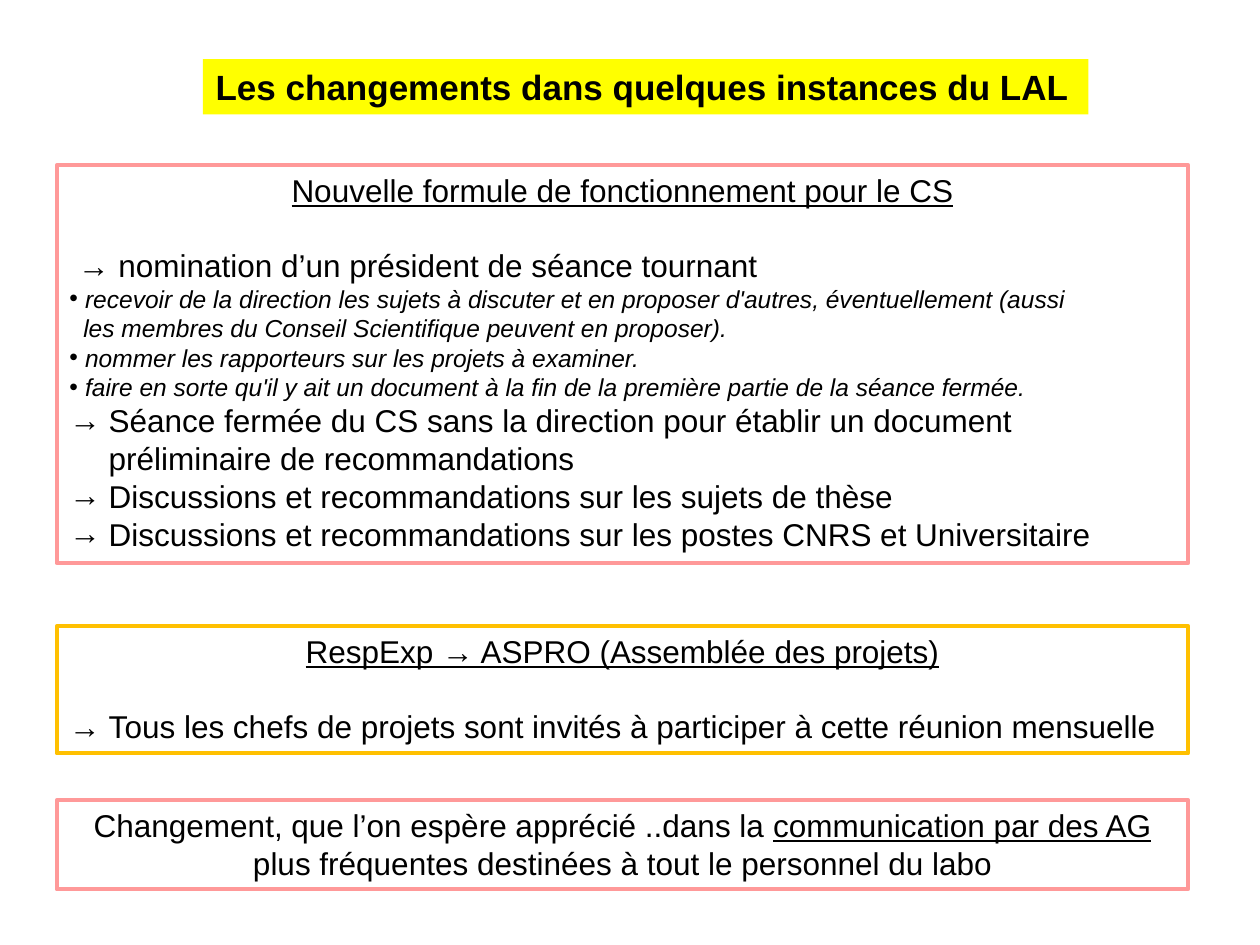
from lxml import etree
from pptx import Presentation
from pptx.dml.color import RGBColor
from pptx.enum.shapes import MSO_SHAPE
from pptx.enum.text import MSO_ANCHOR, MSO_AUTO_SIZE, PP_ALIGN
from pptx.oxml.ns import qn
from pptx.util import Pt

LEFT, WIDTH = 32.4, 646.6
PINK, AMBER, YELLOW, BLACK = "FF9999", "FFC000", "FFFF00", "000000"
BLANK_LINE = 21


def colour(value):
    return RGBColor.from_string(value)


def place(box, left, top, width, height):
    box.left, box.top, box.width, box.height = map(Pt, (left, top, width, height))


def prepare_text(box, anchor=MSO_ANCHOR.TOP):
    frame = box.text_frame
    frame.word_wrap = True
    frame.auto_size = MSO_AUTO_SIZE.NONE
    frame.vertical_anchor = anchor
    frame.margin_left = frame.margin_right = Pt(7.2)
    frame.margin_top = frame.margin_bottom = Pt(3.6)


def outline(box, line_colour, top, height):
    place(box, LEFT, top, WIDTH, height)
    box.fill.background()
    box.line.color.rgb = colour(line_colour)
    box.line.width = Pt(2.25)
    prepare_text(box)


def add_frame(page, line_colour, top, height):
    box = page.shapes.add_shape(MSO_SHAPE.RECTANGLE, 0, 0, 0, 0)
    box.shadow.inherit = False
    outline(box, line_colour, top, height)
    return box


def set_bullet(para, bullet, margin, hanging):
    props = para._p.get_or_add_pPr()
    props.set("marL", str(Pt(margin)))
    props.set("indent", str(-Pt(hanging)))
    if bullet:
        etree.SubElement(props, qn("a:buFont")).set("typeface", "Arial")
        etree.SubElement(props, qn("a:buChar")).set("char", bullet)
    else:
        etree.SubElement(props, qn("a:buNone"))


def style(para, size=18, align=PP_ALIGN.LEFT, after=0, bullet=None, margin=0, hanging=0):
    para.alignment = align
    para.space_before = Pt(0)
    para.space_after = Pt(after)
    set_bullet(para, bullet, margin, hanging)
    para.font.name = "Arial"
    para.font.size = Pt(size)
    para.font.color.rgb = colour(BLACK)


def add_line(box, text, **options):
    frame = box.text_frame
    para = frame.paragraphs[0] if not frame.text else frame.add_paragraph()
    para.text = text
    style(para, **options)
    return para


def add_heading(box, text):
    para = add_line(box, text, align=PP_ALIGN.CENTER, after=BLANK_LINE)
    para.font.underline = True


def add_detail(box, text, bullet="•", margin=9, hanging=9):
    para = add_line(box, text, size=14, bullet=bullet, margin=margin, hanging=hanging)
    para.font.italic = True


def add_arrow_item(box, text):
    add_line(box, text, bullet="→", margin=22.5, hanging=22.5)


def fill_title(title):
    place(title, 116, 33.8, 506, 31.6)
    title.fill.solid()
    title.fill.fore_color.rgb = colour(YELLOW)
    prepare_text(title, MSO_ANCHOR.MIDDLE)
    para = add_line(title, "Les changements dans quelques instances du LAL", size=20)
    para.font.bold = True


def fill_council(box):
    outline(box, PINK, 94.3, 227.5)
    add_heading(box, "Nouvelle formule de fonctionnement pour le CS")
    add_line(box, "→ nomination d’un président de séance tournant", margin=5)
    add_detail(box, "recevoir de la direction les sujets à discuter et en proposer d'autres, éventuellement (aussi")
    add_detail(box, "les membres du Conseil Scientifique peuvent en proposer).", None, 8, 0)
    add_detail(box, "nommer les rapporteurs sur les projets à examiner.")
    add_detail(box, "faire en sorte qu'il y ait un document à la fin de la première partie de la séance fermée.")
    add_arrow_item(box, "Séance fermée du CS sans la direction pour établir un document préliminaire de recommandations")
    add_arrow_item(box, "Discussions et recommandations sur les sujets de thèse")
    add_arrow_item(box, "Discussions et recommandations sur les postes CNRS et Universitaire")


def add_assembly(page):
    box = add_frame(page, AMBER, 357.8, 72.7)
    add_heading(box, "RespExp → ASPRO (Assemblée des projets)")
    add_line(box, "→ Tous les chefs de projets sont invités à participer à cette réunion mensuelle")


def add_communication(page):
    box = add_frame(page, PINK, 457.2, 51)
    para = add_line(box, "Changement, que l’on espère apprécié ..dans la ", align=PP_ALIGN.CENTER)
    span = para.add_run()
    span.text = "communication par des AG "
    span.font.underline = True
    para.add_run().text = "plus fréquentes destinées à tout le personnel du labo"


def main():
    deck = Presentation()
    deck.slide_width, deck.slide_height = Pt(720), Pt(540)
    page = deck.slides.add_slide(deck.slide_layouts[1])
    fill_title(page.shapes.title)
    fill_council(page.placeholders[1])
    add_assembly(page)
    add_communication(page)
    deck.save("out.pptx")


if __name__ == "__main__":
    main()
